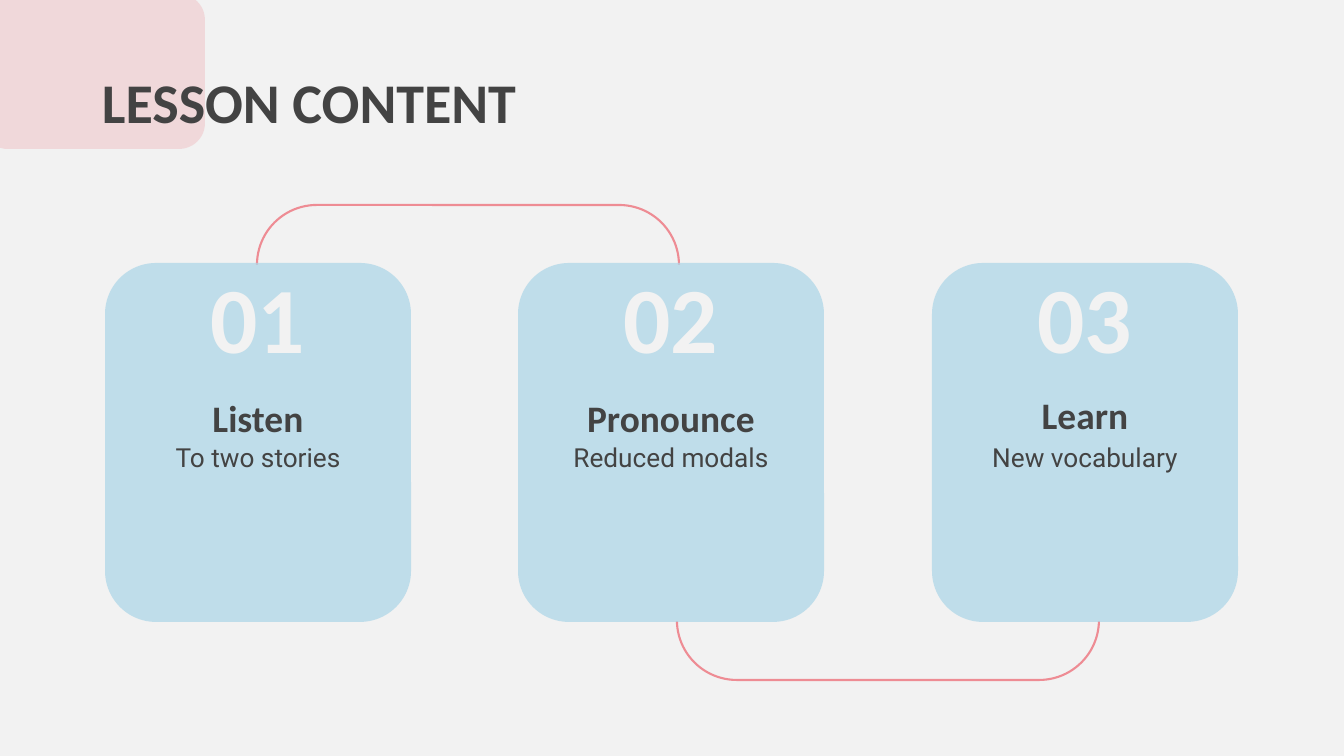
from pptx import Presentation, util as u
from pptx.dml.color import RGBColor
from pptx.enum import shapes, text
from pptx.oxml.ns import qn
from lxml import etree

SCALE = 914400 / 100.8  # EMU per px
BACK, PINK, BLUE, DARK = "F2F2F2", "EE8C94", "AED7E8", "434343"
HEAD, BODY = "Calibri", "Roboto"
INSET = 13
CARD_W, CARD_H, CARD_TOP = 306, 359, 263
CARDS = [("01", "Listen", "To two stories", 366),
         ("02", "Pronounce", "Reduced modals", 366),
         ("03", "Learn", "New vocabulary", 363)]


def px(*values):
    return [round(v * SCALE) for v in values]


def rgb(color):
    return RGBColor.from_string(color)


def add_box(s, at, fill=None, alpha=None, line=None, rounded=True):
    kind = shapes.MSO_SHAPE.ROUNDED_RECTANGLE if rounded else shapes.MSO_SHAPE.RECTANGLE
    sp = s.shapes.add_shape(kind, *px(*at))
    sp.shadow.inherit = False
    if fill:
        sp.fill.solid()
        sp.fill.fore_color.rgb = rgb(fill)
    else:
        sp.fill.background()
    if alpha:
        clr = sp.fill._xPr.find(qn("a:solidFill"))[0]
        etree.SubElement(clr, qn("a:alpha")).set("val", str(alpha * 1000))
    if line:
        sp.line.color.rgb = rgb(line)
        sp.line.width = u.Pt(1.5)
    else:
        sp.line.fill.background()
    return sp


def add_text(s, at, words, size, font=HEAD, color=DARK, bold=True,
             align=text.PP_ALIGN.CENTER, anchor=text.MSO_ANCHOR.TOP):
    tf = s.shapes.add_textbox(*px(*at)).text_frame
    tf.word_wrap = True
    tf.vertical_anchor = anchor
    tf.margin_left, tf.margin_top, tf.margin_right, tf.margin_bottom = px(*[INSET] * 4)
    p = tf.paragraphs[0]
    p.alignment = align
    r = p.add_run()
    r.text = words
    r.font.name, r.font.size, r.font.bold = font, u.Pt(size), bold
    r.font.color.rgb = rgb(color)


def add_bracket(s, left, top, mask_left, mask_top):
    """Rounded outline whose inner part is covered, leaving one open bracket."""
    add_box(s, (left, top, 422, 359), line=PINK)
    add_box(s, (mask_left, mask_top, 499, 327), fill=BACK, rounded=False)


def add_card(s, left):
    add_box(s, (left, CARD_TOP, CARD_W, CARD_H), fill=BLUE, alpha=74)


def add_card_text(s, left, number, name, detail, name_top):
    add_text(s, (left, 247, CARD_W, 130), number, 66.7, color=BACK)
    add_text(s, (left, name_top, CARD_W, 87), name, 26.7, anchor=text.MSO_ANCHOR.BOTTOM)
    add_text(s, (left, 428, CARD_W, 129), detail, 18.7, font=BODY, bold=False)


def main():
    prs = Presentation()
    prs.slide_width, prs.slide_height = px(1344, 756)
    s = prs.slides.add_slide(prs.slide_layouts[6])
    s.background.fill.solid()
    s.background.fill.fore_color.rgb = rgb(BACK)

    # Corner and title
    add_box(s, (-18, -6, 223, 155), fill=PINK, alpha=25)
    add_text(s, (89, 54, 619, 111), "LESSON CONTENT", 40, align=text.PP_ALIGN.LEFT)

    # Brackets that join the cards
    add_bracket(s, 677, 321, 633, 294)
    add_bracket(s, 257, 205, 225, 265)

    # Cards
    for i, card in enumerate(CARDS):
        left = 105 + i * 827 // 2
        add_card(s, left)
        add_card_text(s, left, *card)

    prs.save("out.pptx")


if __name__ == "__main__":
    main()
